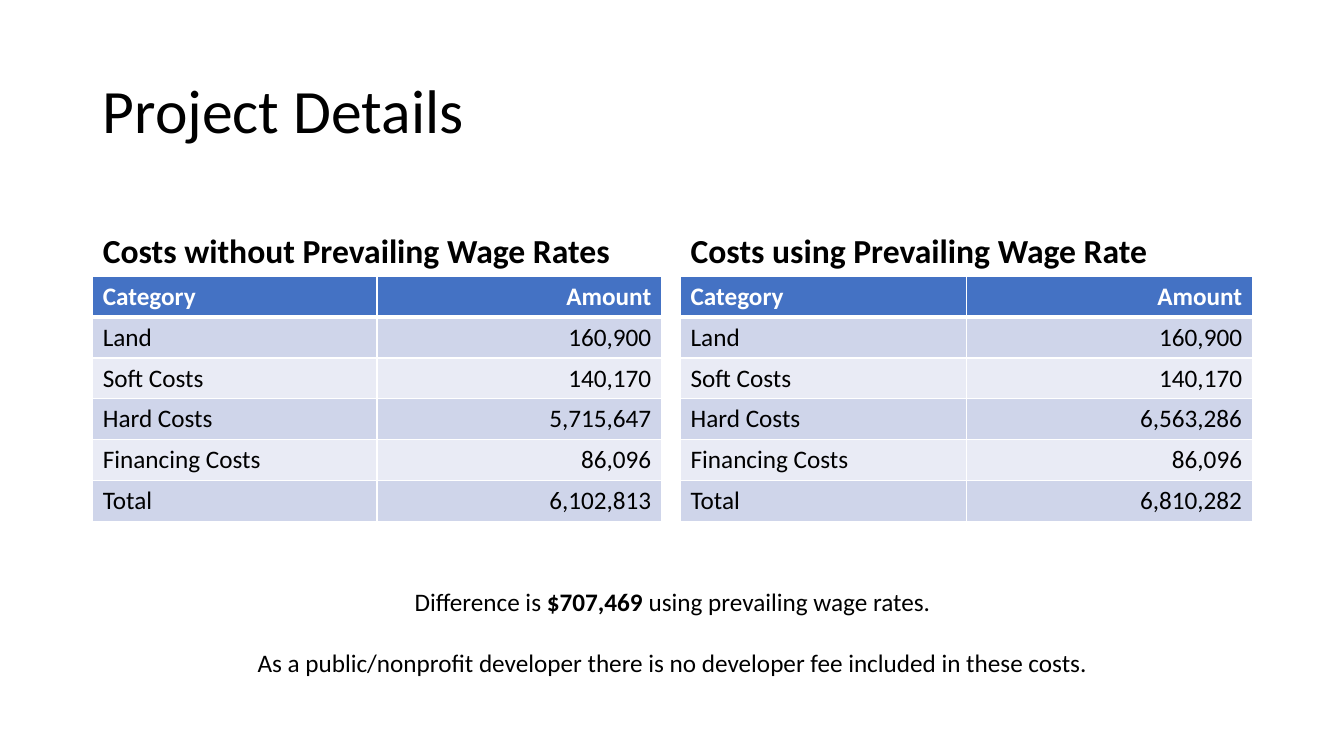
import pptx
import pptx.dml.color
import pptx.enum.text
import pptx.oxml
import pptx.oxml.ns
import pptx.util

WIDTH, HEIGHT = 13.33, 7.5
LEFT, CONTENT_WIDTH = 0.92, 11.5
ROW_HEIGHT = 0.405
BLACK, WHITE, HEADER_BLUE = "000000", "FFFFFF", "4472C4"
BANDS = ("CFD5EA", "E9EBF5")
ALIGN = pptx.enum.text.PP_ALIGN
ANCHOR = pptx.enum.text.MSO_ANCHOR

COSTS = (
    ("Costs without Prevailing Wage Rates", LEFT, 5.64, (
        ("Category", "Amount"),
        ("Land", "160,900"),
        ("Soft Costs", "140,170"),
        ("Hard Costs", "5,715,647"),
        ("Financing Costs", "86,096"),
        ("Total", "6,102,813"),
    )),
    ("Costs using Prevailing Wage Rate", 6.75, 5.67, (
        ("Category", "Amount"),
        ("Land", "160,900"),
        ("Soft Costs", "140,170"),
        ("Hard Costs", "6,563,286"),
        ("Financing Costs", "86,096"),
        ("Total", "6,810,282"),
    )),
)
NOTES = (
    (("Difference is ", False), ("$707,469 ", True), ("using prevailing wage rates.", False)),
    (("As a public/nonprofit developer there is no developer fee included in these costs.", False),),
)


def rgb(hex_colour):
    """Turn a hex string into a colour."""
    return pptx.dml.color.RGBColor.from_string(hex_colour)


def inches(*lengths):
    """Convert lengths in inches to slide units."""
    return [pptx.util.Inches(length) for length in lengths]


def write(paragraph, text, size=18, colour=BLACK, bold=False, align=ALIGN.LEFT, spacing=1.0):
    """Add one formatted run to a paragraph."""
    paragraph.alignment = align
    paragraph.line_spacing = spacing
    paragraph.space_before = pptx.util.Pt(0)
    run = paragraph.add_run()
    run.text = text
    run.font.name = "Calibri"
    run.font.size = pptx.util.Pt(size)
    run.font.bold = bold
    run.font.color.rgb = rgb(colour)


def fill_placeholder(placeholder, box, text, anchor, **text_format):
    """Move a placeholder into its box and write its text."""
    placeholder.left, placeholder.top, placeholder.width, placeholder.height = inches(*box)
    frame = placeholder.text_frame
    frame.word_wrap = True
    frame.auto_size = pptx.enum.text.MSO_AUTO_SIZE.NONE
    frame.vertical_anchor = anchor
    write(frame.paragraphs[0], text, spacing=0.9, **text_format)


def rule_cell(cell, **widths):
    """Draw white cell borders of the given widths in points."""
    properties = cell._tc.get_or_add_tcPr()
    for side, width in widths.items():
        properties.append(pptx.oxml.parse_xml(
            f'<a:ln{side} {pptx.oxml.ns.nsdecls("a")} w="{pptx.util.Pt(width)}">'
            f'<a:solidFill><a:srgbClr val="{WHITE}"/></a:solidFill></a:ln{side}>'))


def add_cost_table(slide, box, costs):
    """Place a banded table of cost categories and amounts."""
    table = slide.shapes.add_table(len(costs), len(costs[0]), *inches(*box)).table
    for row, entry in enumerate(costs):
        is_header = row == 0
        for column, text in enumerate(entry):
            cell = table.cell(row, column)
            rule_cell(cell, L=1, R=1, T=3 if row == 1 else 1, B=3 if is_header else 1)
            cell.fill.solid()
            cell.fill.fore_color.rgb = rgb(HEADER_BLUE if is_header else BANDS[(row - 1) % 2])
            write(cell.text_frame.paragraphs[0], text, bold=is_header,
                  colour=WHITE if is_header else BLACK,
                  align=ALIGN.RIGHT if column else ALIGN.LEFT)


def add_notes(slide, box):
    """Place the centred remarks below the tables."""
    frame = slide.shapes.add_textbox(*inches(*box)).text_frame
    frame.word_wrap = True
    for index, remark in enumerate(NOTES):
        paragraph = frame.add_paragraph() if index else frame.paragraphs[0]
        for text, bold in remark:
            write(paragraph, text, bold=bold, align=ALIGN.CENTER)
        if index:
            paragraph.space_before = pptx.util.Pt(21.5)


def add_project_details(presentation):
    """Build the comparison slide of project costs."""
    slide = presentation.slides.add_slide(presentation.slide_layouts[4])
    parts = {part.placeholder_format.idx: part for part in slide.placeholders}
    fill_placeholder(parts[0], (LEFT, 0.4, CONTENT_WIDTH, 1.45), "Project Details",
                     ANCHOR.MIDDLE, size=44)
    for heading_idx, (heading, left, width, costs) in zip((1, 3), COSTS):
        fill_placeholder(parts[heading_idx], (left, 1.84, width, 0.9), heading,
                         ANCHOR.BOTTOM, size=24, bold=True)
        add_cost_table(slide, (left, 2.74, width, ROW_HEIGHT * len(costs)), costs)
        unused = parts[heading_idx + 1].element
        unused.getparent().remove(unused)
    add_notes(slide, (LEFT, 5.77, CONTENT_WIDTH, 1.01))


def main():
    """Create and save the presentation."""
    presentation = pptx.Presentation()
    presentation.slide_width, presentation.slide_height = inches(WIDTH, HEIGHT)
    add_project_details(presentation)
    presentation.save("out.pptx")


if __name__ == "__main__":
    main()
